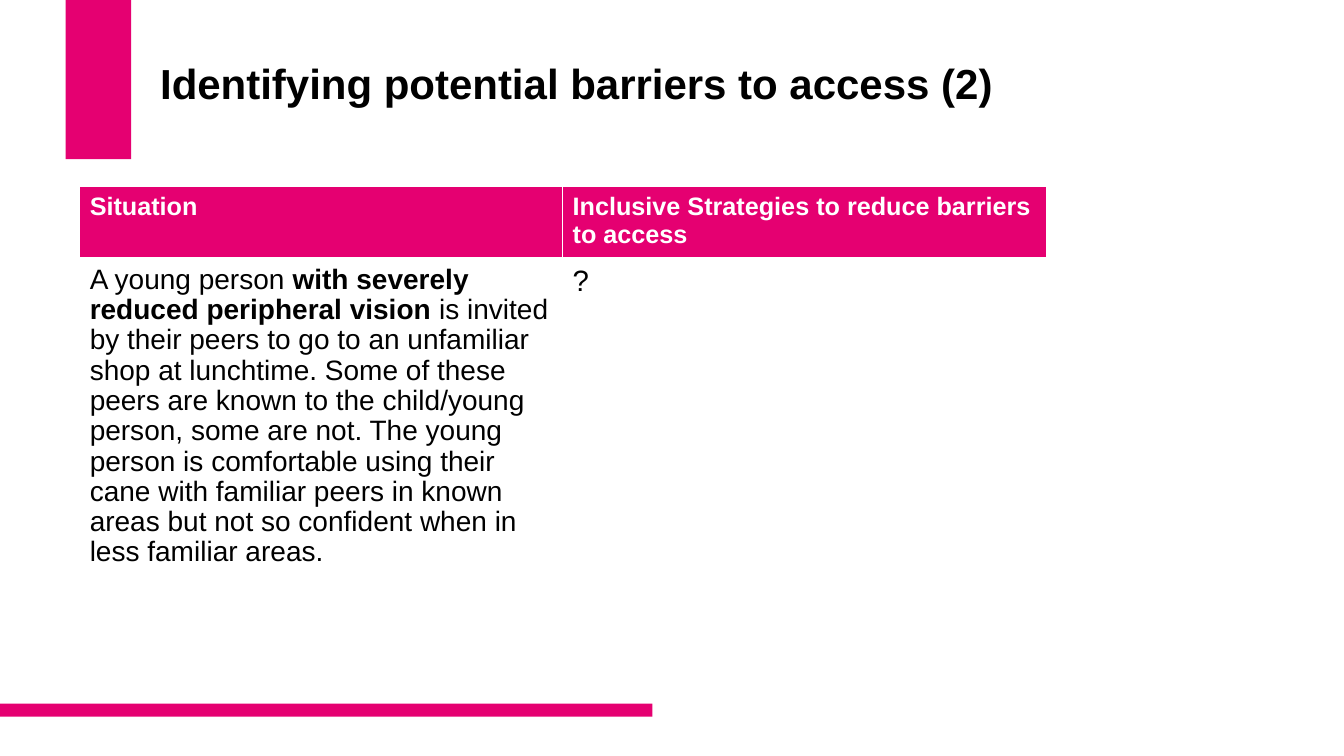
from dataclasses import dataclass

from lxml import etree
from pptx import Presentation
from pptx import util as u
from pptx.dml.color import RGBColor
from pptx.enum import shapes, text
from pptx.oxml.ns import qn


@dataclass(frozen=True)
class Theme:
    font: str = "Arial"
    accent: RGBColor = RGBColor(0xE5, 0x00, 0x71)
    ink: RGBColor = RGBColor(0x00, 0x00, 0x00)
    paper: RGBColor = RGBColor(0xFF, 0xFF, 0xFF)
    title_size: float = 30
    header_size: float = 18
    body_size: float = 20
    prompt_size: float = 21


class SlideBuilder:
    def __init__(self, slide, theme):
        self.slide = slide
        self.theme = theme

    def add_runs(self, paragraph, runs, size, color):
        for wording, bold in runs:
            run = paragraph.add_run()
            run.text = wording
            run.font.name = self.theme.font
            run.font.size = u.Pt(size)
            run.font.bold = bold
            run.font.color.rgb = color

    def bar(self, left, top, width, height):
        shape = self.slide.shapes.add_shape(
            shapes.MSO_SHAPE.RECTANGLE,
            u.Inches(left), u.Inches(top), u.Inches(width), u.Inches(height))
        shape.shadow.inherit = False
        shape.fill.solid()
        shape.fill.fore_color.rgb = self.theme.accent
        shape.line.fill.background()

    def title(self, wording, left, top, width, height):
        shape = self.slide.shapes.add_textbox(
            u.Inches(left), u.Inches(top), u.Inches(width), u.Inches(height))
        frame = shape.text_frame
        frame.word_wrap = True
        frame.vertical_anchor = text.MSO_ANCHOR.MIDDLE
        frame.margin_bottom = u.Inches(0.6)
        paragraph = frame.paragraphs[0]
        paragraph.line_spacing = 0.9
        self.add_runs(paragraph, [(wording, True)], self.theme.title_size, self.theme.ink)

    def table(self, left, top, columns, rows):
        table = self.slide.shapes.add_table(
            len(rows), len(columns), u.Inches(left), u.Inches(top),
            u.Inches(sum(columns)), u.Inches(sum(rows))).table
        for column, width in zip(table.columns, columns):
            column.width = u.Inches(width)
        for row, height in zip(table.rows, rows):
            row.height = u.Inches(height)
        return table

    def cell(self, cell, runs, size, color, fill, bottom_border=1, line_spacing=None):
        cell.margin_left = cell.margin_right = u.Inches(0.1)
        cell.margin_top = cell.margin_bottom = u.Inches(0.06)
        self.borders(cell, bottom_border)
        cell.fill.solid()
        cell.fill.fore_color.rgb = fill
        paragraph = cell.text_frame.paragraphs[0]
        paragraph.line_spacing = line_spacing
        self.add_runs(paragraph, runs, size, color)

    def borders(self, cell, bottom):
        properties = cell._tc.get_or_add_tcPr()
        for side, points in (("L", 1), ("R", 1), ("T", 1), ("B", bottom)):
            line = etree.SubElement(properties, qn(f"a:ln{side}"), w=str(u.Pt(points)))
            fill = etree.SubElement(line, qn("a:solidFill"))
            etree.SubElement(fill, qn("a:srgbClr"), val=str(self.theme.paper))


def main():
    presentation = Presentation()
    presentation.slide_width = u.Inches(13.33)
    presentation.slide_height = u.Inches(7.5)
    theme = Theme()
    builder = SlideBuilder(
        presentation.slides.add_slide(presentation.slide_layouts[6]), theme)

    builder.bar(0.65, 0, 0.65, 1.58)
    builder.bar(0, 6.98, 6.47, 0.13)
    builder.title("Identifying potential barriers to access (2)", 1.49, 0.4, 9.6, 1.45)

    table = builder.table(0.79, 1.85, columns=[4.79, 4.8], rows=[0.63, 3.82])
    headings = ["Situation", "Inclusive Strategies to reduce barriers to access"]
    for column, heading in enumerate(headings):
        builder.cell(table.cell(0, column), [(heading, True)], theme.header_size,
                     theme.paper, theme.accent, bottom_border=3)

    situation = [
        ("A young person ", False),
        ("with severely reduced peripheral vision ", True),
        ("is invited by their peers to go to an unfamiliar shop at lunchtime. "
         "Some of these peers are known to the child/young person, some are not. "
         "The young person is comfortable using their cane with familiar peers in "
         "known areas but not so confident when in less familiar areas.", False),
    ]
    builder.cell(table.cell(1, 0), situation, theme.body_size, theme.ink, theme.paper,
                 line_spacing=0.97)
    builder.cell(table.cell(1, 1), [("?", False)], theme.prompt_size, theme.ink, theme.paper)

    presentation.save("out.pptx")


if __name__ == "__main__":
    main()
